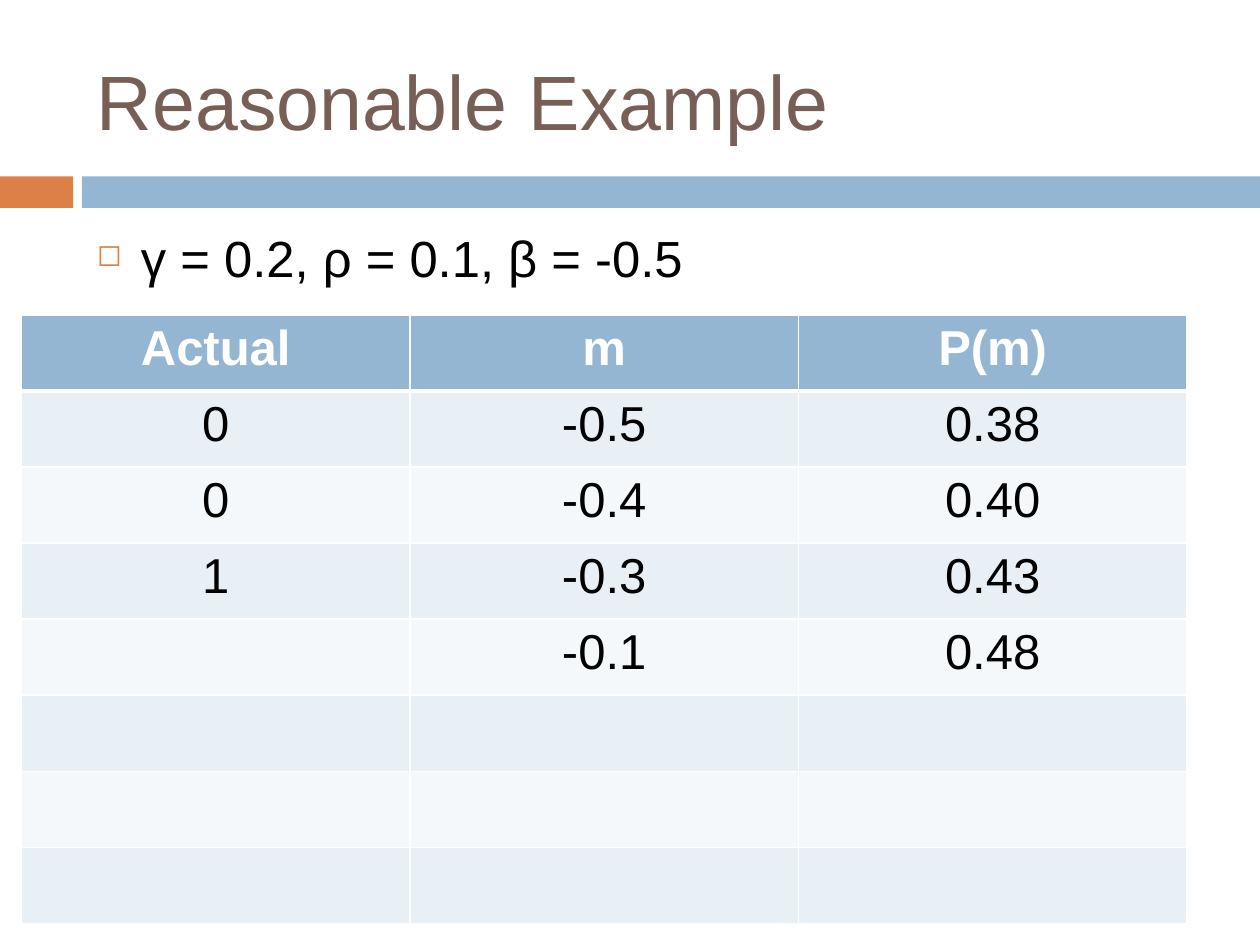
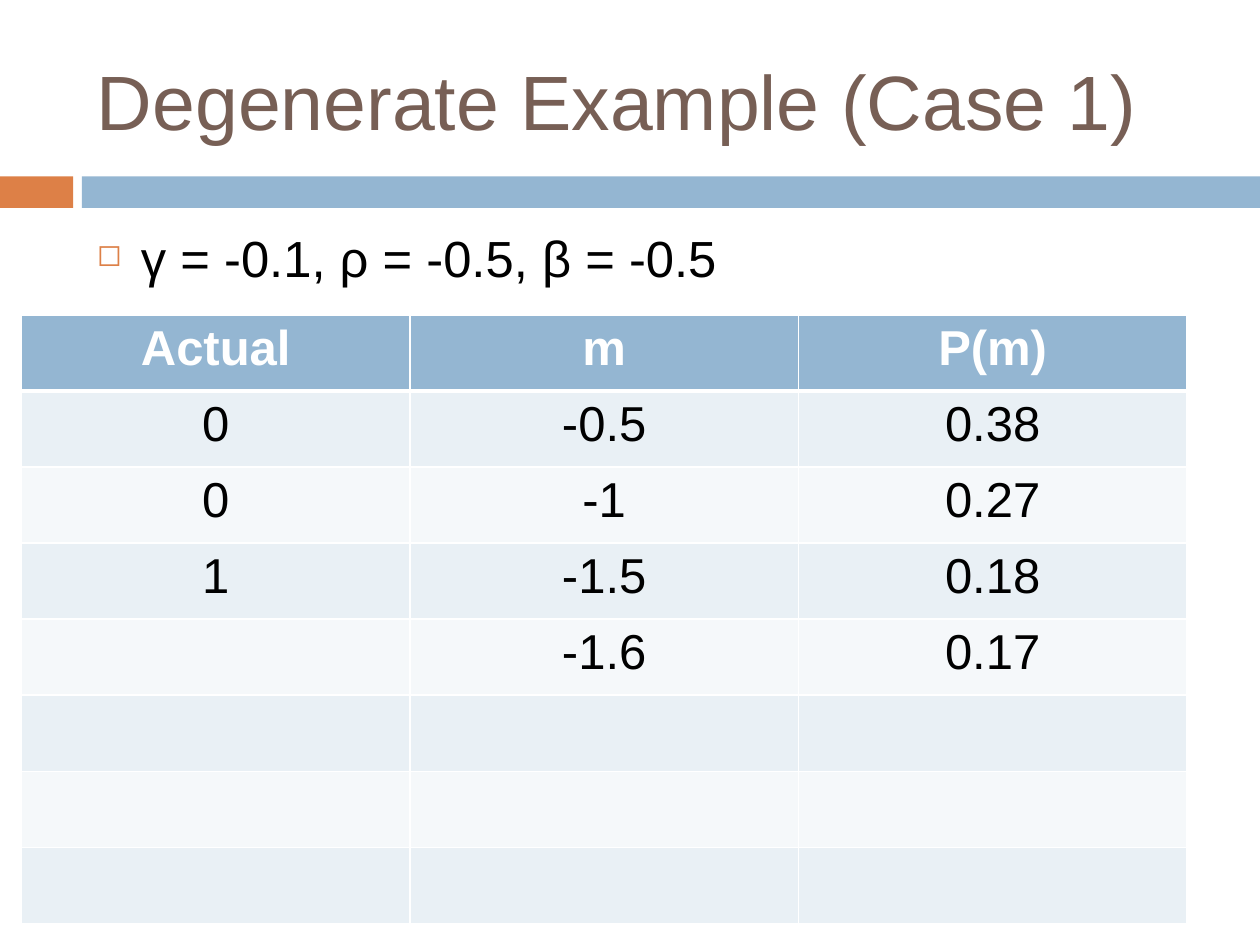
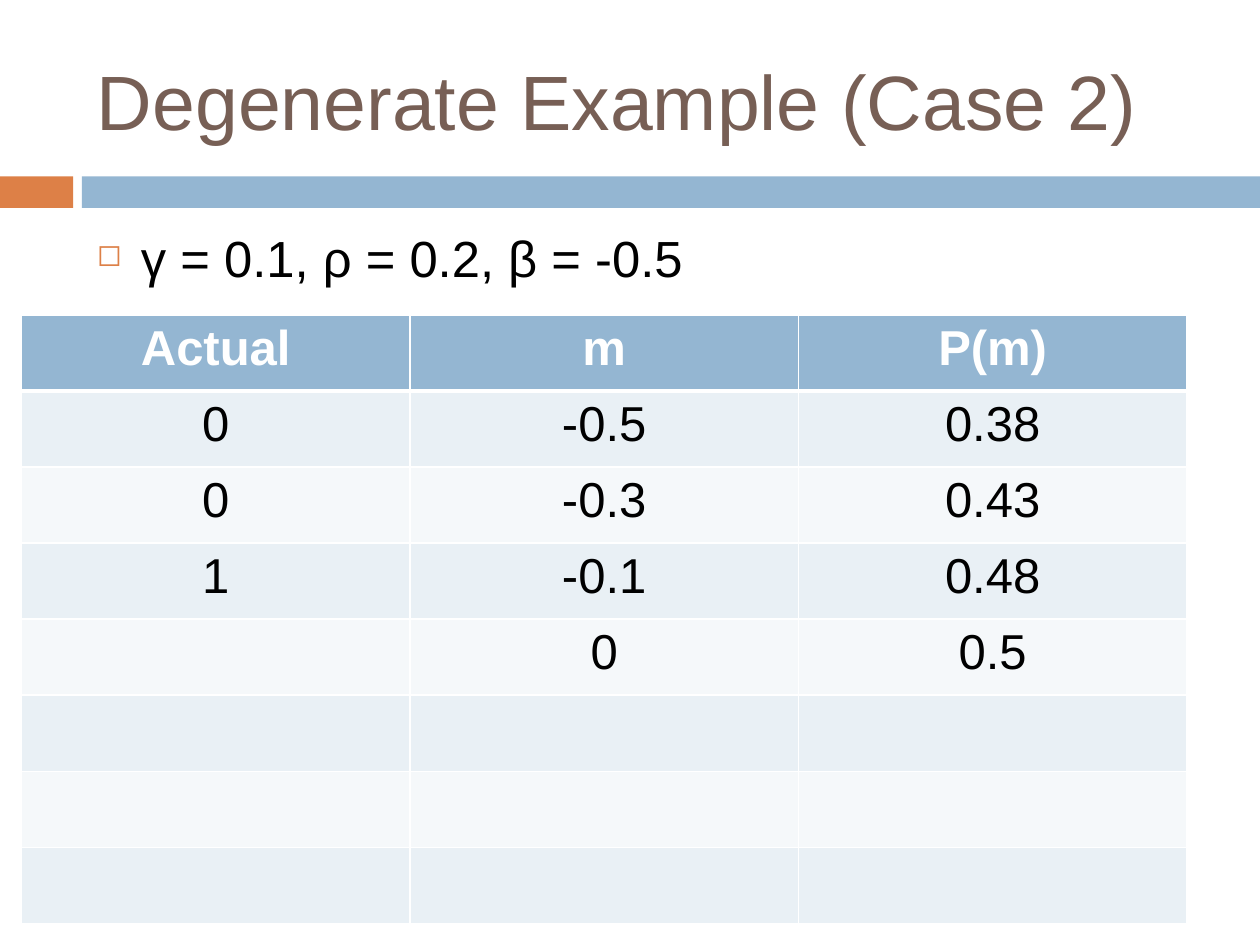
"""Build three slides that compare worked examples of a learning model."""
from lxml import etree
from pptx import Presentation
from pptx import util as u
from pptx.dml.color import RGBColor
from pptx.enum import shapes, text
from pptx.oxml import ns

COLORS = {
    "title": "775F55",
    "accent": "DD8047",
    "band": "94B6D2",
    "row_dark": "E9F0F5",
    "row_light": "F5F8FA",
    "white": "FFFFFF",
    "black": "000000",
}
FONT = "Arial"
HEADER = ("Actual", "m", "P(m)")
ROW_COUNT = 8
EXAMPLES = [
    ("Reasonable Example", "γ = 0.2, ρ = 0.1, β = -0.5",
     [("0", "-0.5", "0.38"), ("0", "-0.4", "0.40"),
      ("1", "-0.3", "0.43"), ("", "-0.1", "0.48")]),
    ("Degenerate Example (Case 1)", "γ = -0.1, ρ = -0.5, β = -0.5",
     [("0", "-0.5", "0.38"), ("0", "-1", "0.27"),
      ("1", "-1.5", "0.18"), ("", "-1.6", "0.17")]),
    ("Degenerate Example (Case 2)", "γ = 0.1, ρ = 0.2, β = -0.5",
     [("0", "-0.5", "0.38"), ("0", "-0.3", "0.43"),
      ("1", "-0.1", "0.48"), ("", "0", "0.5")]),
]


def rgb(name):
    """Return the named colour."""
    return RGBColor.from_string(COLORS[name])


def add_child(parent, tag, **attributes):
    """Append a DrawingML element and return it."""
    child = etree.SubElement(parent, ns.qn(f"a:{tag}"))
    for key, value in attributes.items():
        child.set(key, str(value))
    return child


def write(para, content, size=28, color="black", bold=False, align=None):
    """Add formatted text to a paragraph."""
    para.alignment = align
    span = para.add_run()
    span.text = content
    span.font.name = FONT
    span.font.size = u.Pt(size)
    span.font.bold = bold
    span.font.color.rgb = rgb(color)


def add_bullet(para):
    """Give a paragraph a hanging square bullet."""
    props = para._p.get_or_add_pPr()
    indent = u.Inches(0.35)
    props.set("marL", str(indent))
    props.set("indent", str(-indent))
    add_child(add_child(props, "buClr"), "srgbClr", val=COLORS["accent"])
    add_child(props, "buSzPct", val=60000)
    add_child(props, "buChar", char="◻")


def set_borders(cell, **widths):
    """Draw white borders of the given widths in points."""
    props = cell._tc.get_or_add_tcPr()
    for index, side in enumerate(("lnL", "lnR", "lnT", "lnB")):
        line = add_child(props, side, w=u.Pt(widths.get(side, 1)))
        add_child(add_child(line, "solidFill"), "srgbClr", val=COLORS["white"])
        props.remove(line)
        props.insert(index, line)


class Builder:
    """Hold the deck style and the current slide."""

    def __init__(self):
        """Start an empty deck."""
        self.deck = Presentation()
        self.deck.slide_width = u.Inches(10)
        self.deck.slide_height = u.Inches(7.5)
        self.page = None

    def start_page(self, title):
        """Add a slide with its bands and title."""
        self.page = self.deck.slides.add_slide(self.deck.slide_layouts[6])
        self.band(0, 0.58, "accent")
        self.band(0.65, 9.35, "band")
        para = self.text_box(0.25, 1.08, text.MSO_ANCHOR.MIDDLE)
        write(para, title, size=44, color="title")

    def band(self, left, width, color):
        """Draw one part of the band under the title."""
        box = self.page.shapes.add_shape(
            shapes.MSO_SHAPE.RECTANGLE,
            u.Inches(left), u.Inches(1.4), u.Inches(width), u.Inches(0.25))
        box.shadow.inherit = False
        box.fill.solid()
        box.fill.fore_color.rgb = rgb(color)
        box.line.fill.background()

    def text_box(self, top, height, anchor=text.MSO_ANCHOR.TOP):
        """Add a text box in the content column and return its paragraph."""
        box = self.page.shapes.add_textbox(
            u.Inches(0.67), u.Inches(top), u.Inches(8.92), u.Inches(height))
        box.text_frame.word_wrap = True
        box.text_frame.vertical_anchor = anchor
        return box.text_frame.paragraphs[0]

    def parameters(self, content):
        """Add the bulleted line of parameters."""
        para = self.text_box(1.75, 4.92)
        write(para, content, size=29)
        add_bullet(para)

    def table(self, rows):
        """Add the table of results with its spare rows."""
        table = self.page.shapes.add_table(
            ROW_COUNT, len(HEADER), u.Inches(0.17), u.Inches(2.5),
            u.Inches(9.25), u.Inches(4.83)).table
        spare = [("",) * len(HEADER)] * (ROW_COUNT - 1 - len(rows))
        for row, values in enumerate([HEADER, *rows, *spare]):
            for column, value in enumerate(values):
                self.cell(table.cell(row, column), row, value)

    def cell(self, cell, row, value):
        """Fill and format one table cell."""
        is_header = row == 0
        stripe = "row_dark" if row % 2 else "row_light"
        cell.fill.solid()
        cell.fill.fore_color.rgb = rgb("band" if is_header else stripe)
        set_borders(cell, lnT=3 if row == 1 else 1, lnB=3 if is_header else 1)
        if value:
            write(cell.text_frame.paragraphs[0], value, bold=is_header,
                  color="white" if is_header else "black",
                  align=text.PP_ALIGN.CENTER)


def main():
    """Build and save the deck."""
    builder = Builder()
    for title, parameters, rows in EXAMPLES:
        builder.start_page(title)
        builder.parameters(parameters)
        builder.table(rows)
    builder.deck.save("out.pptx")


if __name__ == "__main__":
    main()
